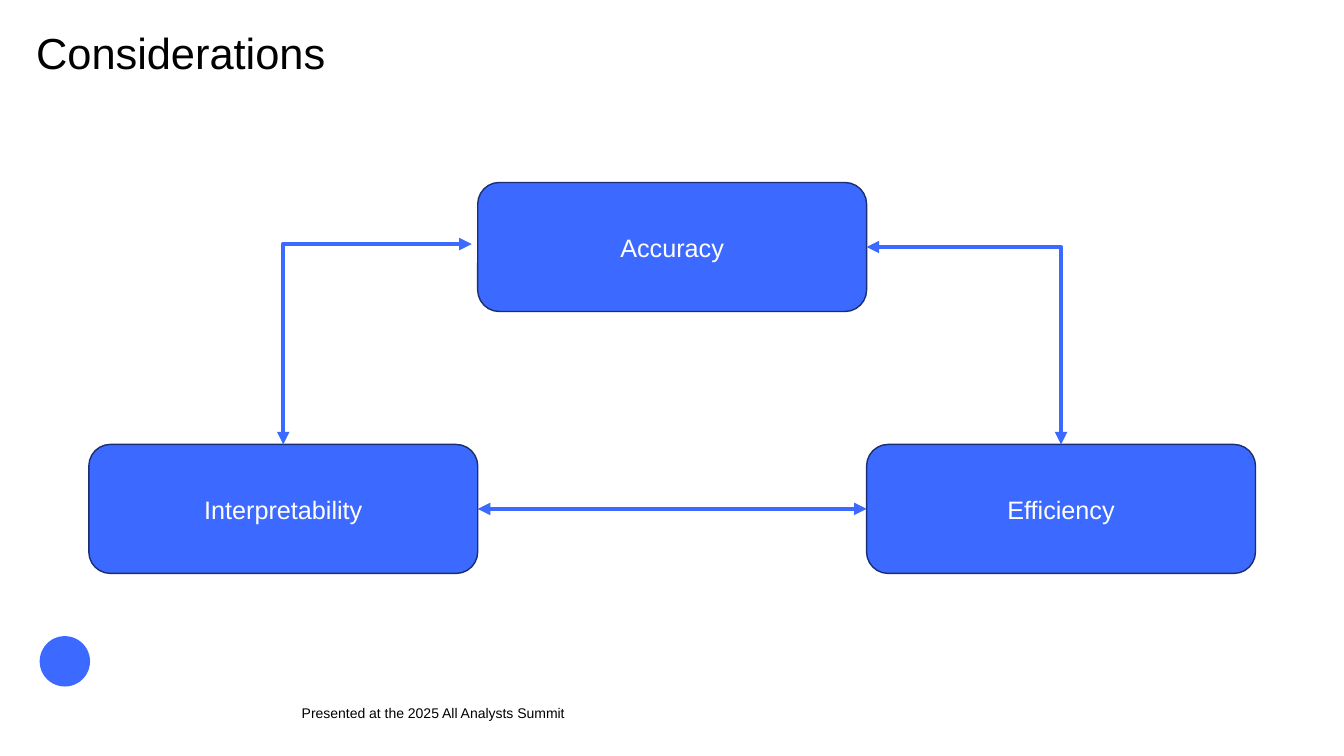
from lxml.etree import SubElement
from pptx import Presentation
from pptx.dml.color import RGBColor
from pptx.enum.shapes import MSO_CONNECTOR as Link, MSO_SHAPE as Shape
from pptx.enum.text import MSO_ANCHOR as Anchor, PP_ALIGN as Align
from pptx.oxml.ns import qn
from pptx.util import Cm, Pt

BLUE, NAVY, WHITE, BLACK = "3C69FF", "1A2E70", "FFFFFF", "000000"


def color(hex_code):
    return RGBColor.from_string(hex_code)


def write(shape, text, size, hex_code, align, anchor):
    frame = shape.text_frame
    frame.word_wrap = True
    frame.vertical_anchor = anchor
    para = frame.paragraphs[0]
    para.text = text
    para.alignment = align
    para.font.name = "Arial"
    para.font.size = Pt(size)
    para.font.color.rgb = color(hex_code)
    return frame


deck = Presentation()
deck.slide_width, deck.slide_height = Cm(33.87), Cm(19.05)
page = deck.slides.add_slide(deck.slide_layouts[6])

# Plain mark at the bottom left
mark = page.shapes.add_shape(Shape.OVAL, Cm(1), Cm(16.03), Cm(1.27), Cm(1.27))
mark.shadow.inherit = False
mark.fill.solid()
mark.fill.fore_color.rgb = color(BLUE)
mark.line.fill.background()

# Title and footer
texts = [
    ("Considerations", 31, Align.LEFT, Anchor.TOP, 0.91, 0.81, 15, 3.4),
    ("Presented at the 2025 All Analysts Summit", 10, Align.CENTER, Anchor.BOTTOM,
     5.2, 17.68, 11.43, 0.5),
]
for text, size, align, anchor, *place in texts:
    box = page.shapes.add_textbox(*map(Cm, place))
    frame = write(box, text, size, BLACK, align, anchor)
    frame.margin_left = frame.margin_right = frame.margin_top = frame.margin_bottom = 0
    frame.paragraphs[0].line_spacing = 0.9 if text == "Considerations" else 1.0

# Three considerations, in columns one box wide
BOX_WIDTH, BOX_HEIGHT, FIRST_LEFT = 9.8, 3.25, 2.24
boxes = {}
for name, column, top in [("Accuracy", 1, 4.6), ("Interpretability", 0, 11.2),
                          ("Efficiency", 2, 11.2)]:
    box = page.shapes.add_shape(
        Shape.ROUNDED_RECTANGLE, Cm(FIRST_LEFT + column * BOX_WIDTH), Cm(top),
        Cm(BOX_WIDTH), Cm(BOX_HEIGHT))
    box.shadow.inherit = False
    box.fill.solid()
    box.fill.fore_color.rgb = color(BLUE)
    box.line.color.rgb = color(NAVY)
    box.line.width = Pt(1)
    write(box, name, 18, WHITE, Align.CENTER, Anchor.MIDDLE)
    boxes[name] = box

# Two-way arrows; the left elbow starts just short of the Accuracy box
links = [
    (Link.ELBOW, None, ("Interpretability", 0)),
    (Link.STRAIGHT, ("Interpretability", 3), ("Efficiency", 1)),
    (Link.ELBOW, ("Accuracy", 3), ("Efficiency", 0)),
]
for kind, start, end in links:
    arrow = page.shapes.add_connector(kind, Cm(11.89), Cm(6.15), Cm(7.14), Cm(11.2))
    if start:
        arrow.begin_connect(boxes[start[0]], start[1])
    arrow.end_connect(boxes[end[0]], end[1])
    arrow.line.color.rgb = color(BLUE)
    arrow.line.width = Pt(3)
    properties = arrow._element.spPr
    if kind == Link.ELBOW:
        properties.find(qn("a:prstGeom")).set("prst", "bentConnector2")
    line = properties.find(qn("a:ln"))
    for tip in ("a:headEnd", "a:tailEnd"):
        SubElement(line, qn(tip), type="triangle")
    SubElement(properties, qn("a:effectLst"))

deck.save("out.pptx")
